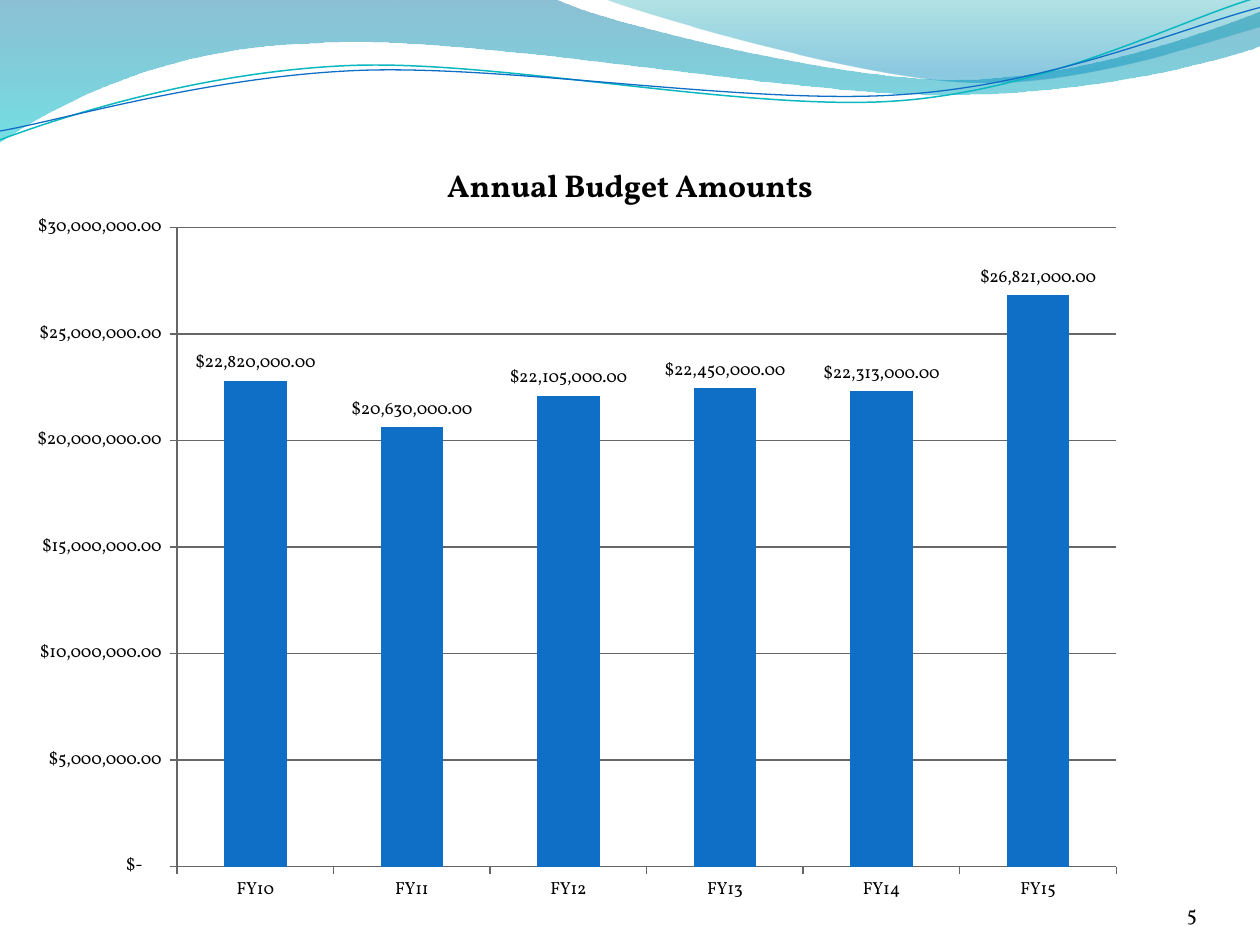
import math

import pptx
import pptx.util
import pptx.chart.data
import pptx.dml.color
import pptx.enum.chart
import pptx.enum.text
import pptx.oxml
import pptx.oxml.ns
from pptx.util import Inches

FONT = "Vollkorn"
COLORS = {"text": "000000", "bar": "0F6FC6", "axis": "666666", "teal": "0AB8BF"}
MONEY = '_("$"* #,##0.00_);_("$"* \\(#,##0.00\\);_("$"* "-"??_);_(@_)'
TITLE = "Annual Budget Amounts"
PAGE_NUMBER = "5"
BUDGETS = {
    "FY10": 22820000,
    "FY11": 20630000,
    "FY12": 22105000,
    "FY13": 22450000,
    "FY14": 22313000,
    "FY15": 26821000,
}
PLOT = {"x": 0.12, "y": 0.119, "w": 0.788, "h": 0.83}
WAVE_TILT = -2.7

BANDS = [
    {
        "start": (0, 0),
        "segments": [
            [(4.4, -0.01)],
            [(4.76, 0.17), (6.64, 0.63), (7.58, 0.63)],
            [(8.53, 0.63), (9.58, 0.26), (10, 0.09)],
            [(10.01, 0.36)],
            [(9.83, 0.44), (8.7, 0.76), (7.46, 0.75)],
            [(6.22, 0.75), (3.82, 0.28), (2.57, 0.34)],
            [(1.29, 0.36), (0.46, 0.83), (-0.01, 1.13)],
        ],
        "stops": [(0, "0074A1", 45), (1, "00C6CF", 55)],
    },
    {
        "start": (4.79, -0.01),
        "segments": [
            [(5.09, 0.11), (6.82, 0.62), (7.69, 0.65)],
            [(8.56, 0.69), (9.61, 0.32), (10, 0.21)],
            [(10, 0)],
        ],
        "stops": [(0, "00A1A9", 30), (0.8, "008BBF", 45)],
    },
]
WAVES = [
    {
        "start": (0, 1.11),
        "segments": [
            [(0.48, 0.93), (1.58, 0.57), (2.77, 0.52)],
            [(3.95, 0.47), (5.93, 0.89), (7.13, 0.8)],
            [(8.33, 0.71), (9.38, 0.15), (9.98, -0.02)],
        ],
        "center": (4.99, 0.58),
        "line": ("teal", 0.85),
    },
    {
        "start": (0, 1.04),
        "segments": [
            [(0.47, 0.96), (1.64, 0.61), (2.83, 0.56)],
            [(4.03, 0.51), (5.97, 0.84), (7.17, 0.75)],
            [(8.36, 0.67), (9.41, 0.21), (10, 0.06)],
        ],
        "center": (5, 0.59),
        "line": ("bar", 0.75),
    },
]


def rgb(value):
    return pptx.dml.color.RGBColor.from_string(value)


def turn(point, center, degrees):
    angle = math.radians(degrees)
    x, y = point[0] - center[0], point[1] - center[1]
    return (
        center[0] + x * math.cos(angle) - y * math.sin(angle),
        center[1] + x * math.sin(angle) + y * math.cos(angle),
    )


def add_outline(page, outline, close, tilt=0):
    points = [outline["start"]] + sum(outline["segments"], [])
    if tilt:
        points = [turn(point, outline["center"], -tilt) for point in points]
    places = [(Inches(x), Inches(y)) for x, y in points]
    builder = page.shapes.build_freeform(*places[0])
    builder.add_line_segments(places[1:], close=False)
    shape = builder.convert_to_shape()
    shape.shadow.inherit = False
    shape.rotation = tilt

    qn, nsdecls = pptx.oxml.ns.qn, pptx.oxml.ns.nsdecls
    track = next(shape._element.iter(qn("a:pathLst")))[0]
    lines = iter(track.findall(qn("a:lnTo")))
    for segment in outline["segments"]:
        parts = [next(lines) for _ in segment]
        if len(parts) == 3:
            curve = pptx.oxml.parse_xml(f'<a:cubicBezTo {nsdecls("a")}/>')
            parts[0].addprevious(curve)
            for part in parts:
                curve.append(part[0])
                track.remove(part)
    if close:
        track.append(pptx.oxml.parse_xml(f'<a:close {nsdecls("a")}/>'))
    return shape


def add_band(page, band):
    shape = add_outline(page, band, True)
    shape.line.fill.background()
    shape.fill.gradient()
    shape.fill.gradient_angle = 270
    for stop, (position, color, _) in zip(shape.fill.gradient_stops, band["stops"]):
        stop.position = position
        stop.color.rgb = rgb(color)
    tags = list(shape._element.spPr.iter(pptx.oxml.ns.qn("a:srgbClr")))
    for tag, (_, _, opacity) in zip(tags, band["stops"]):
        alpha = pptx.oxml.parse_xml(
            f'<a:alpha {pptx.oxml.ns.nsdecls("a")} val="{opacity * 1000}"/>'
        )
        tag.append(alpha)


def add_wave(page, wave):
    shape = add_outline(page, wave, False, WAVE_TILT)
    color, width = wave["line"]
    shape.fill.background()
    shape.line.color.rgb = rgb(COLORS[color])
    shape.line.width = pptx.util.Pt(width)


def style_font(font, size, bold=False):
    font.name = FONT
    font.size = pptx.util.Pt(size)
    font.bold = bold
    font.color.rgb = rgb(COLORS["text"])


def style_line(line):
    line.color.rgb = rgb(COLORS["axis"])
    line.width = pptx.util.Pt(0.75)


def add_budget_chart(page):
    data = pptx.chart.data.CategoryChartData(number_format=MONEY)
    data.categories = list(BUDGETS)
    data.add_series("Series 1", list(BUDGETS.values()))
    chart = page.shapes.add_chart(
        pptx.enum.chart.XL_CHART_TYPE.COLUMN_CLUSTERED,
        Inches(0.27), Inches(1.08), Inches(9.46), Inches(6.11), data,
    ).chart
    style_font(chart.font, 10)
    chart.has_legend = False
    chart.has_title = True
    chart.chart_title.include_in_layout = True
    chart.chart_title.text_frame.text = TITLE
    style_font(chart.chart_title.text_frame.paragraphs[0].runs[0].font, 18, True)

    plot = chart.plots[0]
    plot.vary_by_categories = False
    plot.gap_width = 150
    series = plot.series[0]
    series.format.fill.solid()
    series.format.fill.fore_color.rgb = rgb(COLORS["bar"])
    labels = series.data_labels
    labels.show_value = True
    labels.position = pptx.enum.chart.XL_LABEL_POSITION.OUTSIDE_END

    for axis in (chart.category_axis, chart.value_axis):
        axis.major_tick_mark = pptx.enum.chart.XL_TICK_MARK.OUTSIDE
        style_line(axis.format.line)
    amounts = chart.value_axis
    amounts.minimum_scale, amounts.maximum_scale = 0, 30000000
    amounts.major_unit = 5000000
    style_line(amounts.major_gridlines.format.line)
    for numbers in (labels, amounts.tick_labels):
        numbers.number_format = MONEY
        numbers.number_format_is_linked = False

    parts = "".join(f'<c:{key} val="{value}"/>' for key, value in PLOT.items())
    layout = pptx.oxml.parse_xml(
        f'<c:layout {pptx.oxml.ns.nsdecls("c")}><c:manualLayout>'
        '<c:layoutTarget val="inner"/><c:xMode val="edge"/><c:yMode val="edge"/>'
        f"{parts}</c:manualLayout></c:layout>"
    )
    area = chart._chartSpace.chart.plotArea
    for old in area.findall(pptx.oxml.ns.qn("c:layout")):
        area.remove(old)
    area.insert(0, layout)


def add_page_number(page):
    box = page.shapes.add_textbox(Inches(8.67), Inches(6.95), Inches(0.83), Inches(0.4))
    frame = box.text_frame
    frame.word_wrap = True
    frame.vertical_anchor = pptx.enum.text.MSO_ANCHOR.BOTTOM
    frame.margin_left = frame.margin_right = frame.margin_top = frame.margin_bottom = 0
    frame.text = PAGE_NUMBER
    para = frame.paragraphs[0]
    para.alignment = pptx.enum.text.PP_ALIGN.RIGHT
    style_font(para.runs[0].font, 12)


def main():
    deck = pptx.Presentation()
    deck.slide_width, deck.slide_height = Inches(10), Inches(7.5)
    page = deck.slides.add_slide(deck.slide_layouts[6])
    for band in BANDS:
        add_band(page, band)
    for wave in WAVES:
        add_wave(page, wave)
    add_page_number(page)
    add_budget_chart(page)
    deck.save("out.pptx")


if __name__ == "__main__":
    main()
